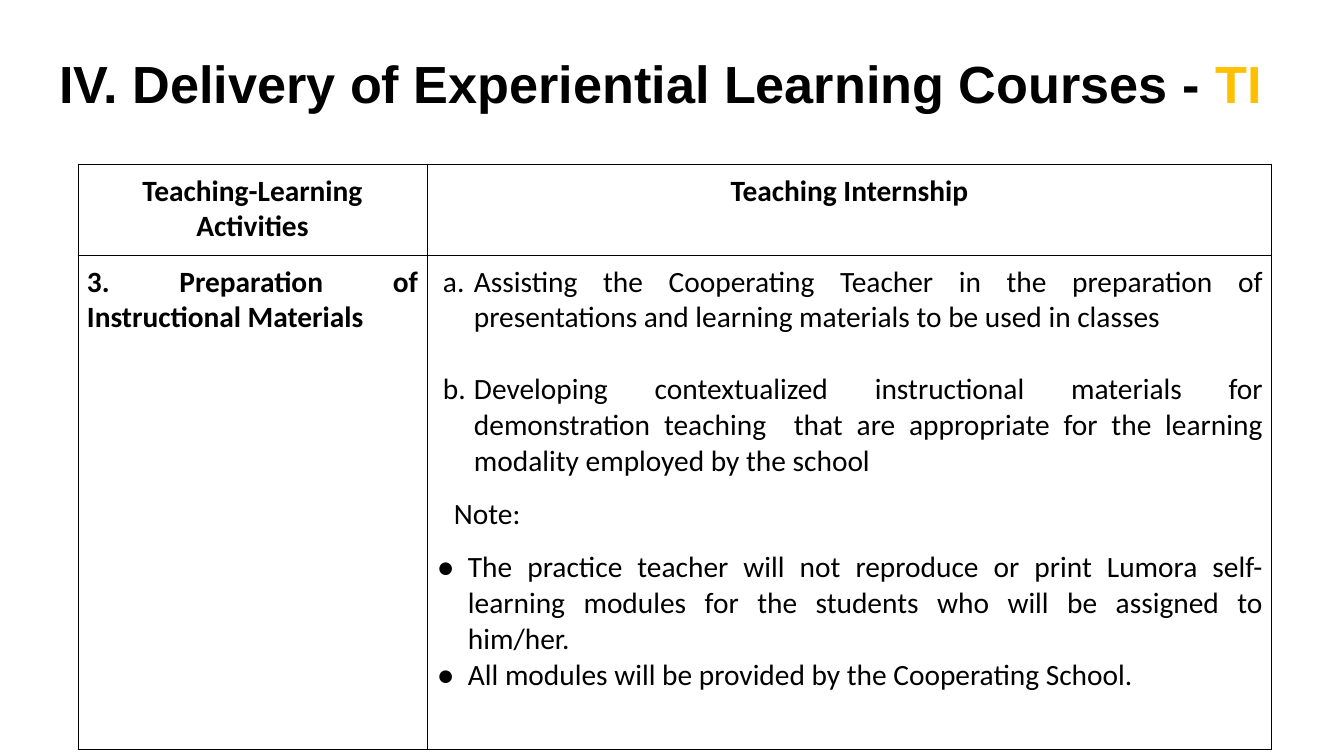
from dataclasses import dataclass

from lxml.etree import SubElement
from pptx import Presentation
from pptx.dml.color import RGBColor as RGB
from pptx.enum.text import MSO_ANCHOR as Anchor, MSO_AUTO_SIZE as Fit, PP_ALIGN as Align
from pptx.oxml.ns import qn
from pptx.util import Pt


def px(n):
    return round(n * 914400 / 100.8)


@dataclass(frozen=True)
class Theme:
    ink: RGB = RGB(0, 0, 0)
    paper: RGB = RGB(255, 255, 255)
    gold: RGB = RGB(0xFF, 0xC0, 0)
    head_font: str = "Arial"
    body_font: str = "Calibri"
    head_size: float = 37.3
    body_size: int = 21
    rule: float = 0.75


THEME = Theme()

HEADS = ["Teaching-Learning Activities", "Teaching Internship"]
TOPIC = "3. Preparation of Instructional Materials"

# text, bullet, left margin px, first-line indent px, space before pt
TASKS = [
    ("Assisting the Cooperating Teacher in the preparation of presentations "
     "and learning materials to be used in classes", "auto", 38, -31, 0),
    ("Developing contextualized instructional materials for demonstration "
     "teaching  that are appropriate for the learning modality employed by "
     "the school", "auto", 38, -31, 25.6),
    ("Note:", None, 38, -20, 12),
    ("The practice teacher will not reproduce or print Lumora self-learning "
     "modules for the students who will be assigned to him/her.",
     "●", 32, -31, 12),
    ("All modules will be provided by the Cooperating School.",
     "●", 32, -31, 0),
]


def style(run, font, size, color, bold):
    run.font.name = font
    run.font.size = Pt(size)
    run.font.color.rgb = color
    run.font.bold = bold


def pad(item, gap):
    item.margin_left = item.margin_right = px(gap)
    item.margin_top = item.margin_bottom = px(gap)


def paint(parent, color):
    SubElement(parent, qn("a:srgbClr"), val=str(color))


def add_title(slide, box, parts):
    title = slide.shapes.title
    title.left, title.top, title.width, title.height = map(px, box)
    frame = title.text_frame
    pad(frame, 13)
    frame.auto_size = Fit.NONE
    frame.word_wrap = True
    frame.vertical_anchor = Anchor.MIDDLE
    para = frame.paragraphs[0]
    para.alignment = Align.LEFT
    for text, color in parts:
        run = para.add_run()
        run.text = text
        style(run, THEME.head_font, THEME.head_size, color, True)


def set_edges(cell):
    props = cell._tc.get_or_add_tcPr()
    for side in "LRTB":
        edge = SubElement(props, qn(f"a:ln{side}"), w=str(Pt(THEME.rule)))
        paint(SubElement(edge, qn("a:solidFill")), THEME.ink)


def write(para, text, align, bold):
    para.text = text
    para.alignment = align
    for run in para.runs:
        style(run, THEME.body_font, THEME.body_size, THEME.ink, bold)


def set_list(para, mark, left, first, before):
    para.space_before = Pt(before)
    props = para._p.get_or_add_pPr()
    props.set("marL", str(px(left)))
    props.set("indent", str(px(first)))
    if mark is None:
        SubElement(props, qn("a:buNone"))
        return
    paint(SubElement(props, qn("a:buClr")), THEME.ink)
    if mark == "auto":
        SubElement(props, qn("a:buFont"), typeface=THEME.body_font)
        SubElement(props, qn("a:buAutoNum"), type="alphaLcPeriod")
    else:
        SubElement(props, qn("a:buFont"), typeface=THEME.head_font)
        SubElement(props, qn("a:buChar"), char=mark)


def add_tasks(cell):
    frame = cell.text_frame
    for i, (text, *form) in enumerate(TASKS):
        para = frame.add_paragraph() if i else frame.paragraphs[0]
        write(para, text, Align.JUSTIFY, False)
        set_list(para, *form)


def add_grid(slide, box, cols, rows):
    grid = slide.shapes.add_table(len(rows), len(cols), *map(px, box)).table
    grid.first_row = grid.horz_banding = False
    for col, width in zip(grid.columns, cols):
        col.width = px(width)
    for row, height in zip(grid.rows, rows):
        row.height = px(height)
    for cell in grid.iter_cells():
        pad(cell, 9)
        cell.vertical_anchor = Anchor.TOP
        set_edges(cell)
        cell.fill.solid()
        cell.fill.fore_color.rgb = THEME.paper
    for cell, text in zip(grid.rows[0].cells, HEADS):
        write(cell.text_frame.paragraphs[0], text, Align.CENTER, True)
    topic, tasks = grid.rows[1].cells
    write(topic.text_frame.paragraphs[0], TOPIC, Align.JUSTIFY, True)
    add_tasks(tasks)


def main():
    deck = Presentation()
    deck.slide_width, deck.slide_height = px(1344), px(756)
    slide = deck.slides.add_slide(deck.slide_layouts.get_by_name("Title Only"))
    add_title(slide, (46, 38, 1252, 90), [
        ("IV. Delivery of Experiential Learning Courses - ", THEME.ink),
        ("TI", THEME.gold),
    ])
    cols, rows = (349, 845), (91, 494)
    add_grid(slide, (78, 164, sum(cols), sum(rows)), cols, rows)
    deck.save("out.pptx")


if __name__ == "__main__":
    main()
